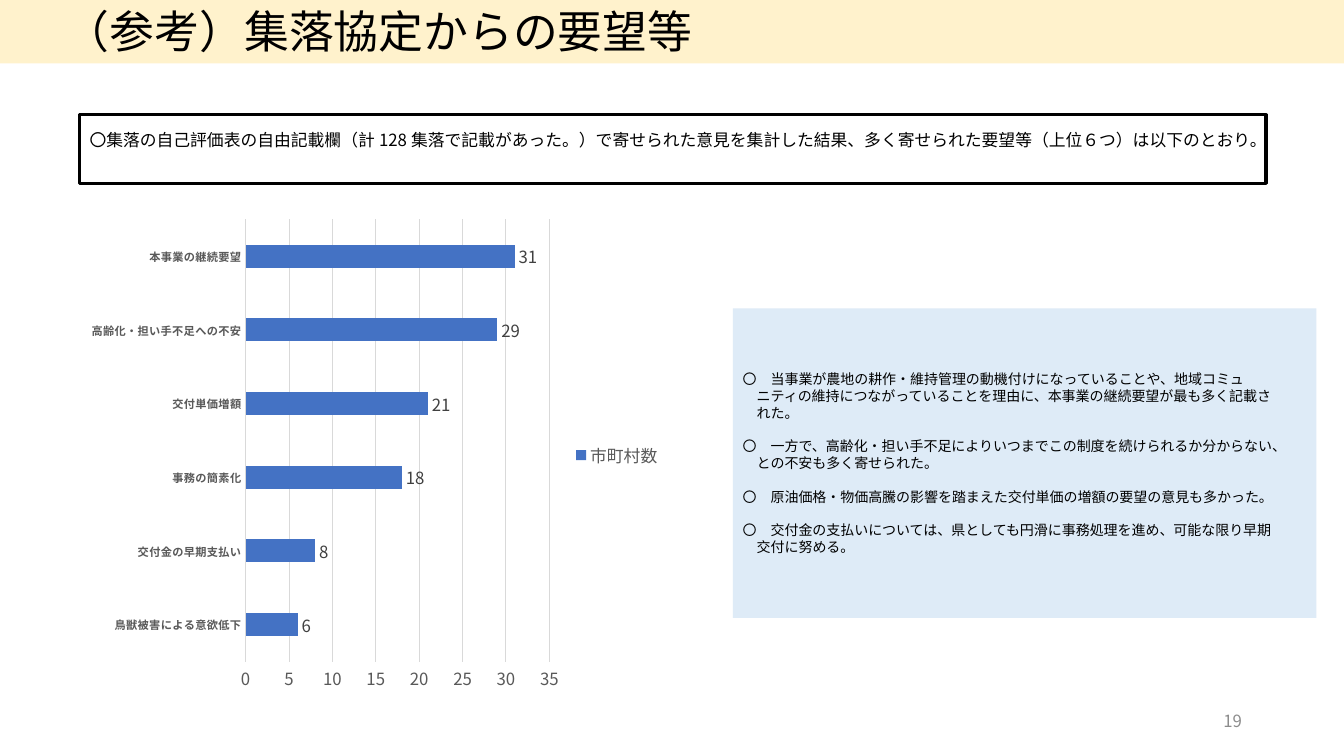
from dataclasses import dataclass
from typing import Optional

from lxml import etree
from pptx import Presentation
from pptx.chart import data as chart_data
from pptx.dml.color import RGBColor
from pptx.enum import chart as charts, shapes, text
from pptx.oxml import ns
from pptx.util import Pt

FONT = "Noto Sans CJK JP"
BLACK = RGBColor(0x00, 0x00, 0x00)
CREAM = RGBColor(0xFF, 0xF2, 0xCC)
PALE_BLUE = RGBColor(0xDE, 0xEB, 0xF7)
BAR_BLUE = RGBColor(0x44, 0x72, 0xC4)
AXIS_GREY = RGBColor(0x59, 0x59, 0x59)
LABEL_GREY = RGBColor(0x40, 0x40, 0x40)
GRID_GREY = RGBColor(0xD9, 0xD9, 0xD9)
NUMBER_GREY = RGBColor(0x8C, 0x8C, 0x8C)


@dataclass(frozen=True)
class Box:
    left: float
    top: float
    width: float
    height: float
    fill: Optional[RGBColor] = None
    line: Optional[RGBColor] = None
    anchor: text.MSO_ANCHOR = text.MSO_ANCHOR.TOP
    inset: float = 7.2
    grows: bool = False

    def frame(self) -> tuple:
        return Pt(self.left), Pt(self.top), Pt(self.width), Pt(self.height)


TITLE = Box(0, -0.72, 960, 46.08, fill=CREAM, inset=46.4, grows=True)
NUMBER = Box(678.24, 500.4, 216, 28.8, anchor=text.MSO_ANCHOR.MIDDLE)
CHART = Box(56.88, 149.76, 422.64, 350.64)
SUMMARY = Box(56.88, 82.08, 847.44, 48.96, line=BLACK, grows=True)
NOTES = Box(523.44, 220.32, 416.88, 221.04, fill=PALE_BLUE, anchor=text.MSO_ANCHOR.MIDDLE)

REQUESTS = {
    "鳥獣被害による意欲低下": 6,
    "交付金の早期支払い": 8,
    "事務の簡素化": 18,
    "交付単価増額": 21,
    "高齢化・担い手不足への不安": 29,
    "本事業の継続要望": 31,
}

NOTE_ITEMS = [
    [
        "〇　当事業が農地の耕作・維持管理の動機付けになっていることや、地域コミュ",
        "ニティの維持につながっていることを理由に、本事業の継続要望が最も多く記載さ",
        "れた。",
    ],
    [
        "〇　一方で、高齢化・担い手不足によりいつまでこの制度を続けられるか分からない、",
        "との不安も多く寄せられた。",
    ],
    ["〇　原油価格・物価高騰の影響を踏まえた交付単価の増額の要望の意見も多かった。"],
    [
        "〇　交付金の支払いについては、県としても円滑に事務処理を進め、可能な限り早期",
        "交付に努める。",
    ],
]


def style_font(font, size: float, color: RGBColor, bold: bool = False) -> None:
    font.size = Pt(size)
    font.bold = bold
    font.name = FONT
    font.color.rgb = color
    east_asian = etree.SubElement(font._rPr, ns.qn("a:ea"))
    east_asian.set("typeface", FONT)


def add_box(slide, box: Box):
    if box.fill is None and box.line is None:
        shape = slide.shapes.add_textbox(*box.frame())
    else:
        shape = slide.shapes.add_shape(shapes.MSO_SHAPE.RECTANGLE, *box.frame())
        shape.shadow.inherit = False
        if box.fill is None:
            shape.fill.background()
        else:
            shape.fill.solid()
            shape.fill.fore_color.rgb = box.fill
        if box.line is None:
            shape.line.fill.background()
        else:
            shape.line.color.rgb = box.line
            shape.line.width = Pt(2.25)
    frame = shape.text_frame
    frame.word_wrap = True
    frame.vertical_anchor = box.anchor
    frame.margin_left = Pt(box.inset)
    if box.grows:
        frame.auto_size = text.MSO_AUTO_SIZE.SHAPE_TO_FIT_TEXT
    return frame


def write(frame, words: str, *, size: float, color: RGBColor = BLACK,
          align: text.PP_ALIGN = text.PP_ALIGN.LEFT, spacing: float = 1.0,
          before: float = 0, indent: float = 0) -> None:
    paragraph = frame.paragraphs[0]
    if paragraph.runs:
        paragraph = frame.add_paragraph()
    paragraph.alignment = align
    paragraph.line_spacing = spacing
    paragraph.space_before = Pt(before)
    if indent:
        paragraph._p.get_or_add_pPr().set("marL", str(Pt(indent)))
    run = paragraph.add_run()
    run.text = words
    style_font(run.font, size, color)


def add_request_chart(slide) -> None:
    data = chart_data.CategoryChartData()
    data.categories = list(REQUESTS)
    data.add_series("市町村数", list(REQUESTS.values()))
    chart = slide.shapes.add_chart(
        charts.XL_CHART_TYPE.BAR_CLUSTERED, *CHART.frame(), data).chart
    style_font(chart.font, 10, BLACK)
    chart.has_title = False
    chart.has_legend = True
    chart.legend.position = charts.XL_LEGEND_POSITION.RIGHT
    chart.legend.include_in_layout = False
    style_font(chart.legend.font, 12, AXIS_GREY)

    plot = chart.plots[0]
    plot.gap_width = 219
    plot.vary_by_categories = False
    series = plot.series[0]
    series.format.fill.solid()
    series.format.fill.fore_color.rgb = BAR_BLUE
    labels = series.data_labels
    labels.show_value = True
    labels.position = charts.XL_LABEL_POSITION.OUTSIDE_END
    style_font(labels.font, 12, LABEL_GREY)

    categories, values = chart.category_axis, chart.value_axis
    for axis in (categories, values):
        axis.major_tick_mark = charts.XL_TICK_MARK.NONE
        axis.minor_tick_mark = charts.XL_TICK_MARK.NONE
    style_font(categories.tick_labels.font, 8, AXIS_GREY, bold=True)
    style_font(values.tick_labels.font, 12, AXIS_GREY)
    values.minimum_scale, values.maximum_scale, values.major_unit = 0, 35, 5
    values.has_major_gridlines = True
    values.format.line.fill.background()
    for line in (categories.format.line, values.major_gridlines.format.line):
        line.color.rgb = GRID_GREY
        line.width = Pt(0.75)


def main() -> None:
    presentation = Presentation()
    presentation.slide_width, presentation.slide_height = Pt(960), Pt(540)
    slide = presentation.slides.add_slide(presentation.slide_layouts[6])

    write(add_box(slide, TITLE), "（参考）集落協定からの要望等", size=32)
    write(add_box(slide, NUMBER), "19", size=12, color=NUMBER_GREY,
          align=text.PP_ALIGN.RIGHT)
    add_request_chart(slide)
    write(add_box(slide, SUMMARY),
          "〇集落の自己評価表の自由記載欄（計128集落で記載があった。）で寄せられた意見を"
          "集計した結果、多く寄せられた要望等（上位６つ）は以下のとおり。",
          size=12, spacing=1.5)

    notes = add_box(slide, NOTES)
    for item_index, lines in enumerate(NOTE_ITEMS):
        for line_index, words in enumerate(lines):
            starts_item = line_index == 0
            write(notes, words, size=10, indent=0 if starts_item else 10,
                  before=12 if starts_item and item_index else 0)

    presentation.save("out.pptx")


if __name__ == "__main__":
    main()
